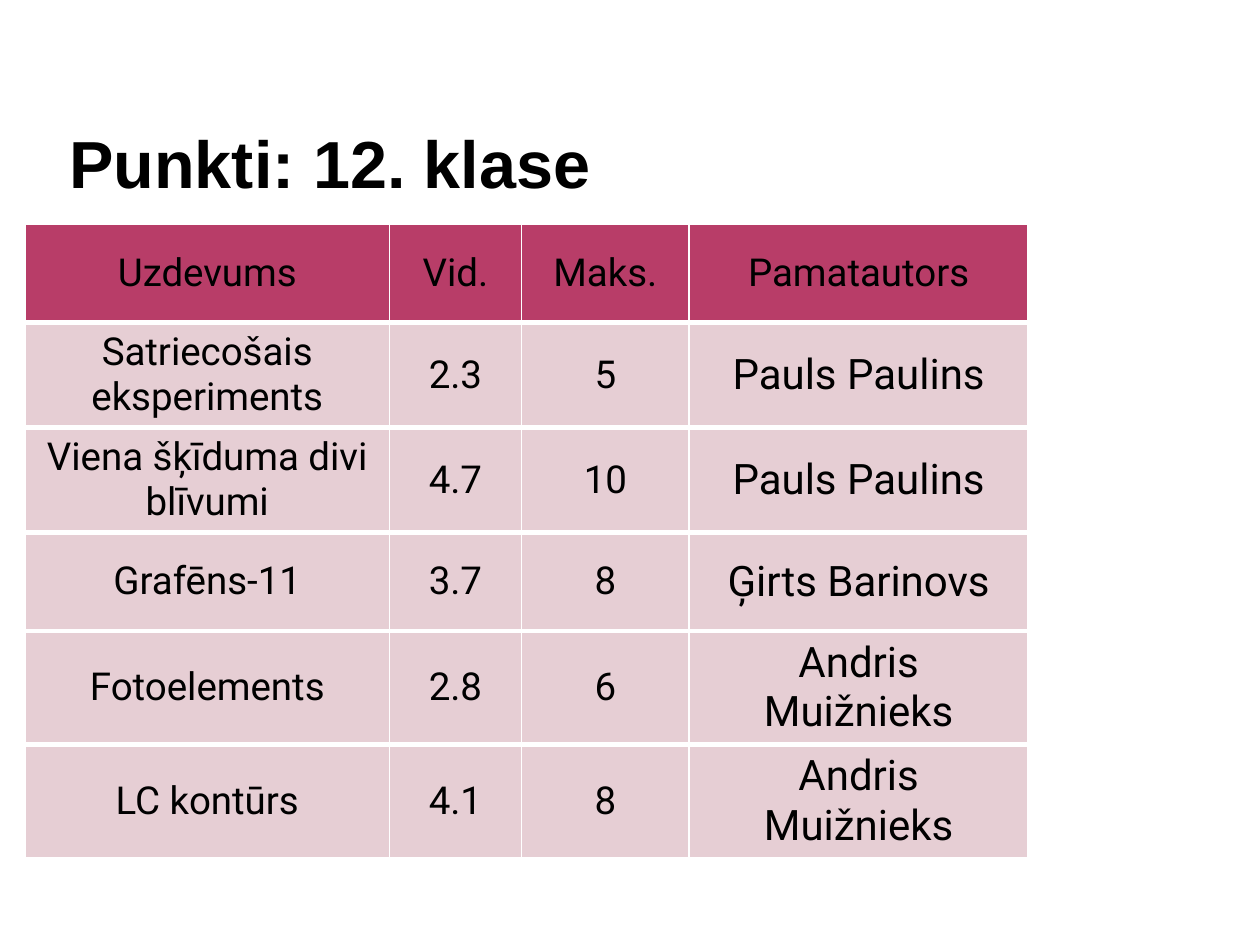
from lxml import etree
from pptx import Presentation
from pptx.dml.color import RGBColor
from pptx.enum.text import MSO_ANCHOR, PP_ALIGN
from pptx.oxml.ns import qn
from pptx.util import Inches, Pt

MIDDLE, BOTTOM = MSO_ANCHOR.MIDDLE, MSO_ANCHOR.BOTTOM
CENTER, LEFT = PP_ALIGN.CENTER, PP_ALIGN.LEFT

BLACK = RGBColor(0x00, 0x00, 0x00)
WHITE = RGBColor(0xFF, 0xFF, 0xFF)
CRIMSON = RGBColor(0xB8, 0x3D, 0x68)
ROSE = RGBColor(0xE6, 0xCE, 0xD4)

TITLE_FORMAT = {"name": "Arial", "size": Pt(38), "bold": True}
CELL_FORMAT = {"name": "Roboto", "size": Pt(22), "bold": False}
AUTHOR_FORMAT = {**CELL_FORMAT, "size": Pt(24)}

COLUMN_WIDTHS = [2.89, 1.05, 1.33, 2.69]
ROW_HEIGHT = 0.78
AUTHOR_COLUMN = 3
RESULTS = [
    ["Uzdevums", "Vid.", "Maks.", "Pamatautors"],
    ["Satriecošais eksperiments", "2.3", "5", "Pauls Paulins"],
    ["Viena šķīduma divi blīvumi", "4.7", "10", "Pauls Paulins"],
    ["Grafēns-11", "3.7", "8", "Ģirts Barinovs"],
    ["Fotoelements", "2.8", "6", "Andris Muižnieks"],
    ["LC kontūrs", "4.1", "8", "Andris Muižnieks"],
]


def write_text(frame, text, alignment, font_format):
    """Write one formatted paragraph into a text frame."""
    para = frame.paragraphs[0]
    para.alignment = alignment
    span = para.add_run()
    span.text = text
    for name, value in font_format.items():
        setattr(span.font, name, value)
    span.font.color.rgb = BLACK


def add_title(page, text):
    """Add the bottom-anchored heading."""
    box = page.shapes.add_textbox(Inches(0.5), Inches(0.35), Inches(7.92), Inches(1.25))
    frame_format = {
        "word_wrap": True,
        "vertical_anchor": BOTTOM,
        "margin_left": Inches(0.05),
        "margin_right": Inches(0.05),
        "margin_top": 0,
        "margin_bottom": 0,
    }
    for name, value in frame_format.items():
        setattr(box.text_frame, name, value)
    write_text(box.text_frame, text, LEFT, TITLE_FORMAT)


def add_borders(cell, top, bottom):
    """Draw white cell borders with the given top and bottom widths in points."""
    properties = cell._tc.get_or_add_tcPr()
    for side, width in {"L": 1, "R": 1, "T": top, "B": bottom}.items():
        line = etree.SubElement(properties, qn(f"a:ln{side}"), w=str(Pt(width)))
        fill = etree.SubElement(line, qn("a:solidFill"))
        etree.SubElement(fill, qn("a:srgbClr"), val=str(WHITE))


def add_results_table(page, results):
    """Add the table of average and maximum points per problem."""
    row_count = len(results)
    frame = page.shapes.add_table(
        row_count, len(COLUMN_WIDTHS), Inches(0.2), Inches(1.78),
        Inches(sum(COLUMN_WIDTHS)), Inches(ROW_HEIGHT * row_count),
    )
    table = frame.table
    for column, width in zip(table.columns, COLUMN_WIDTHS):
        column.width = Inches(width)
    for row_index, values in enumerate(results):
        is_header = row_index == 0
        is_last = row_index == row_count - 1
        for column_index, text in enumerate(values):
            cell = table.cell(row_index, column_index)
            add_borders(cell, 1 if is_header else 3, 1 if is_last else 3)
            cell.fill.solid()
            cell.fill.fore_color.rgb = CRIMSON if is_header else ROSE
            cell.vertical_anchor = MIDDLE
            is_author = column_index == AUTHOR_COLUMN and not is_header
            font_format = AUTHOR_FORMAT if is_author else CELL_FORMAT
            write_text(cell.text_frame, text, CENTER, font_format)


def main():
    """Build the deck and save it."""
    deck = Presentation()
    deck.slide_width, deck.slide_height = Inches(10), Inches(7.5)
    page = deck.slides.add_slide(deck.slide_layouts[6])
    add_title(page, "Punkti: 12. klase")
    add_results_table(page, RESULTS)
    deck.save("out.pptx")


if __name__ == "__main__":
    main()
